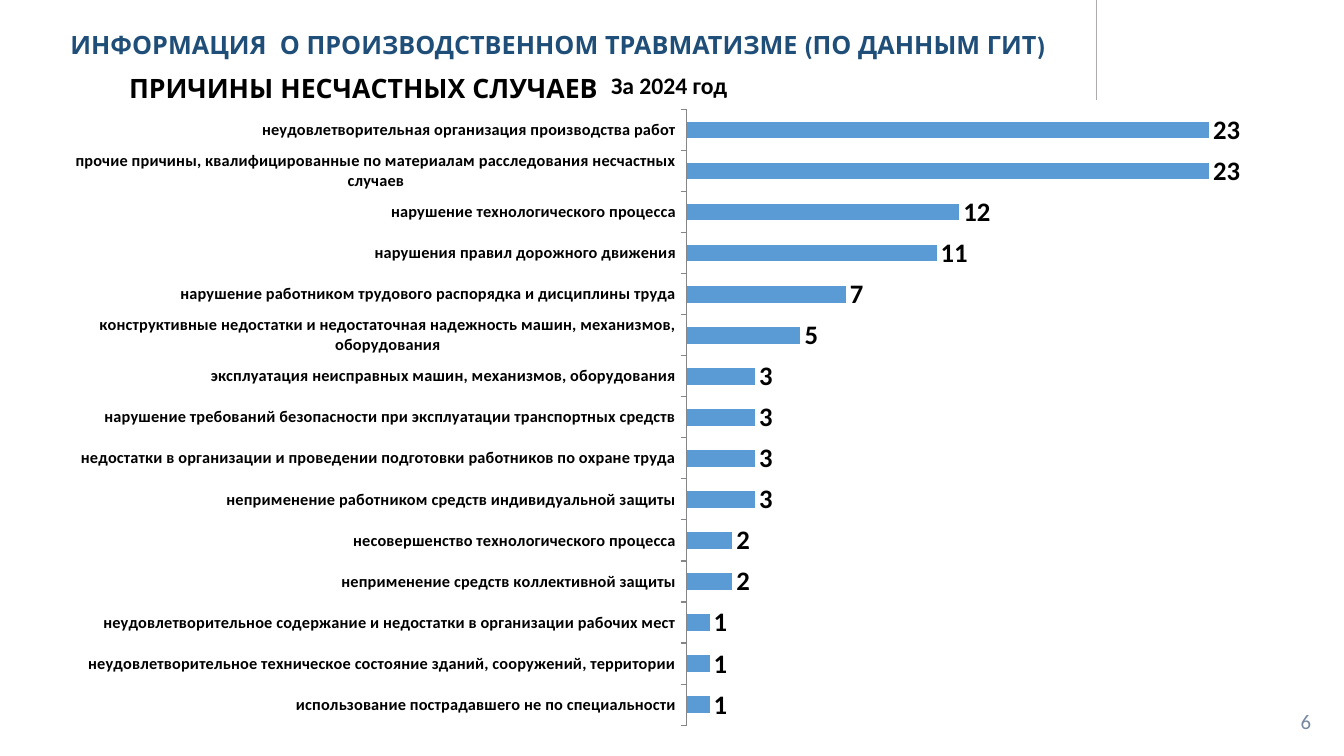
from lxml import etree
from pptx import Presentation
from pptx.chart.data import CategoryChartData
from pptx.dml.color import RGBColor
from pptx.enum import chart as ch, shapes, text
from pptx.oxml import parse_xml
from pptx.oxml.ns import nsdecls, qn
from pptx.util import Inches, Pt

NAVY = RGBColor(0x1F, 0x4E, 0x79)
BLACK = RGBColor(0, 0, 0)
BLUE = RGBColor(0x5B, 0x9B, 0xD5)
SLATE = RGBColor(0x76, 0x88, 0xA1)
GREY = RGBColor(0xAF, 0xAB, 0xAB)
AXIS_GREY = RGBColor(0x86, 0x86, 0x86)
HEADING_FONT = "League Spartan"
BODY_FONT = "Calibri"

CAUSES = [
    ("использование пострадавшего не по специальности", 1),
    ("неудовлетворительное техническое состояние зданий, сооружений, территории", 1),
    ("неудовлетворительное содержание и недостатки в организации рабочих мест", 1),
    ("неприменение средств коллективной защиты", 2),
    ("несовершенство технологического процесса", 2),
    ("неприменение работником средств индивидуальной защиты", 3),
    ("недостатки в организации и проведении подготовки работников по охране труда", 3),
    ("нарушение требований безопасности при эксплуатации транспортных средств", 3),
    ("эксплуатация неисправных машин, механизмов, оборудования", 3),
    ("конструктивные недостатки и недостаточная надежность машин, механизмов, оборудования", 5),
    ("нарушение работником трудового распорядка и дисциплины труда", 7),
    ("нарушения правил дорожного движения", 11),
    ("нарушение технологического процесса", 12),
    ("прочие причины, квалифицированные по материалам расследования несчастных случаев", 23),
    ("неудовлетворительная организация производства работ", 23),
]


def set_font(font, size, color=BLACK, bold=True, name=BODY_FONT):
    font.size, font.bold, font.name = Pt(size), bold, name
    font.color.rgb = color


def write(sp, words, size, align=text.PP_ALIGN.LEFT, anchor=text.MSO_ANCHOR.TOP,
          spacing=None, insets=None, **font):
    tf = sp.text_frame
    tf.word_wrap = True
    tf.auto_size = text.MSO_AUTO_SIZE.NONE
    tf.vertical_anchor = anchor
    if insets:
        tf.margin_left, tf.margin_top, tf.margin_right, tf.margin_bottom = map(Inches, insets)
    p = tf.paragraphs[0]
    p.alignment = align
    p.line_spacing = spacing
    r = p.add_run()
    r.text = words
    set_font(r.font, size, **font)


def add_text(s, box, words, size, **fmt):
    write(s.shapes.add_textbox(*map(Inches, box)), words, size, **fmt)


def add_title(s, box):
    sp = s.shapes.title
    sp.left, sp.top, sp.width, sp.height = map(Inches, box)
    write(sp, "ИНФОРМАЦИЯ  О ПРОИЗВОДСТВЕННОМ ТРАВМАТИЗМЕ (ПО ДАННЫМ ГИТ)", 17,
          spacing=0.9, color=NAVY, name=HEADING_FONT)


def add_divider(s, x, height):
    line = s.shapes.add_connector(shapes.MSO_CONNECTOR.STRAIGHT,
                                  Inches(x), 0, Inches(x), Inches(height))
    line.line.color.rgb = GREY
    line.line.width = Pt(0.75)
    etree.SubElement(line._element.spPr, qn("a:effectLst"))


def add_subtitle(s, left, top):
    """Heading and reporting period, side by side."""
    add_text(s, (left, top, 4.67, 0.32), "ПРИЧИНЫ НЕСЧАСТНЫХ СЛУЧАЕВ", 18,
             insets=(0, 0.01, 0, 0), name=HEADING_FONT)
    add_text(s, (left + 4.42, top - 0.04, 3.29, 0.37), "За 2024 год", 16)


def set_plot_layout(chart, x, y, w, h):
    """Fix the inner plot area, in fractions of the chart."""
    plot_area = chart._chartSpace.chart.plotArea
    for old in plot_area.findall(qn("c:layout")):
        plot_area.remove(old)
    sizes = "".join(f'<c:{tag} val="{val}"/>' for tag, val in zip("xywh", (x, y, w, h)))
    plot_area.insert(0, parse_xml(
        f'<c:layout {nsdecls("c")}><c:manualLayout><c:layoutTarget val="inner"/>'
        f'<c:xMode val="edge"/><c:yMode val="edge"/>{sizes}</c:manualLayout></c:layout>'))


def add_causes_chart(s, box):
    data = CategoryChartData()
    data.categories = [cause for cause, _ in CAUSES]
    data.add_series("Series 1", [count for _, count in CAUSES])
    chart = s.shapes.add_chart(ch.XL_CHART_TYPE.BAR_CLUSTERED,
                               *map(Inches, box), data).chart
    chart.has_legend = chart.has_title = False
    set_font(chart.font, 18, bold=False)
    set_plot_layout(chart, 0.53, 0.01, 0.47, 0.98)

    cat = chart.category_axis
    cat.major_tick_mark = ch.XL_TICK_MARK.OUTSIDE
    cat.format.line.color.rgb = AXIS_GREY
    cat.format.line.width = Pt(0.75)
    set_font(cat.tick_labels.font, 11)

    val = chart.value_axis
    val.minimum_scale, val.maximum_scale = 0, 25
    val.has_major_gridlines = False
    val.visible = False

    plot = chart.plots[0]
    plot.gap_width = 150
    plot.vary_by_categories = False
    fill = plot.series[0].format.fill
    fill.solid()
    fill.fore_color.rgb = BLUE
    plot.has_data_labels = True
    labels = plot.data_labels
    labels.show_value = True
    labels.position = ch.XL_LABEL_POSITION.OUTSIDE_END
    set_font(labels.font, 18)


def main():
    prs = Presentation()
    prs.slide_width, prs.slide_height = Inches(12.6), Inches(7.09)
    s = prs.slides.add_slide(prs.slide_layouts[5])
    add_divider(s, 10.28, 0.94)
    add_title(s, (0.56, 0.26, 9.77, 0.97))
    add_subtitle(s, 1.21, 0.66)
    add_causes_chart(s, (0.44, 0.97, 11.32, 5.89))
    add_text(s, (9.45, 6.57, 2.94, 0.38), "6", 14, align=text.PP_ALIGN.RIGHT,
             anchor=text.MSO_ANCHOR.MIDDLE, color=SLATE, bold=False)
    prs.save("out.pptx")


if __name__ == "__main__":
    main()
